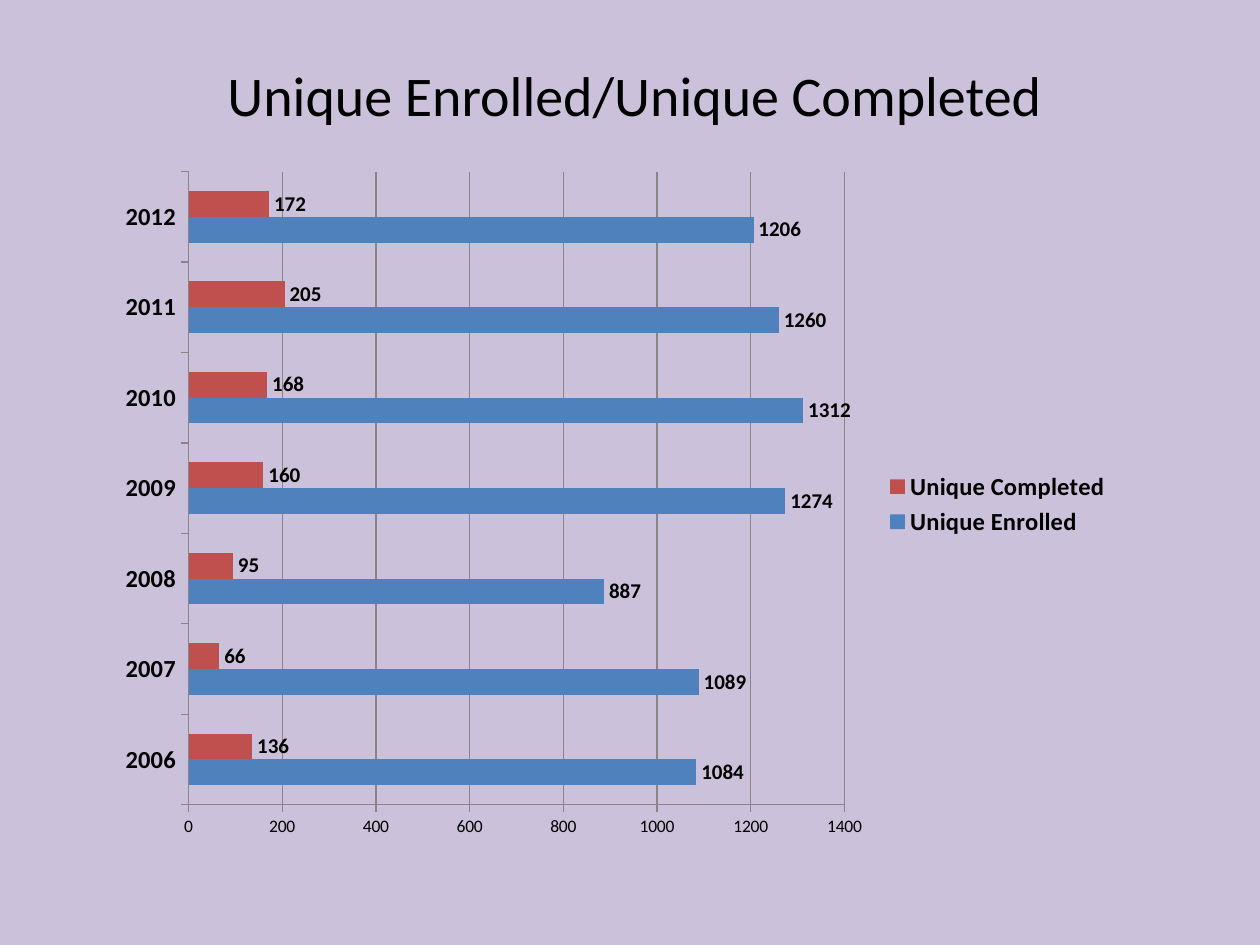
"""Build a slide with a bar chart of unique enrolments and completions by year."""
import pptx
import pptx.chart.data
import pptx.dml.color
import pptx.enum.chart
import pptx.enum.text
import pptx.util
from pptx.util import Cm

FONT = "Calibri"
COLORS = {
    "background": "CCC1DA",
    "text": "000000",
    "lines": "868686",
    "Unique Enrolled": "4F81BD",
    "Unique Completed": "C0504D",
}
YEARS = [str(year) for year in range(2006, 2013)]
COUNTS = {
    "Unique Enrolled": [1084, 1089, 887, 1274, 1312, 1260, 1206],
    "Unique Completed": [136, 66, 95, 160, 168, 205, 172],
}


def rgb(role):
    return pptx.dml.color.RGBColor.from_string(COLORS[role])


def style_font(font, size, bold=False):
    font.name = FONT
    font.size = pptx.util.Pt(size)
    font.bold = bold
    font.color.rgb = rgb("text")


def style_line(line):
    line.color.rgb = rgb("lines")
    line.width = pptx.util.Pt(0.75)


def set_title(slide, wording):
    title = slide.shapes.title
    title.left, title.top, title.width, title.height = Cm(2.54), Cm(0.84), Cm(20.52), Cm(2.11)
    frame = title.text_frame
    frame.text = wording
    frame.word_wrap = True
    frame.vertical_anchor = pptx.enum.text.MSO_ANCHOR.MIDDLE
    heading = frame.paragraphs[0]
    heading.alignment = pptx.enum.text.PP_ALIGN.CENTER
    style_font(heading.font, 32)


def style_axis(axis, size, bold, gridlines):
    axis.has_title = False
    axis.major_tick_mark = pptx.enum.chart.XL_TICK_MARK.OUTSIDE
    axis.minor_tick_mark = pptx.enum.chart.XL_TICK_MARK.NONE
    axis.has_major_gridlines = gridlines
    style_line(axis.format.line)
    if gridlines:
        style_line(axis.major_gridlines.format.line)
    style_font(axis.tick_labels.font, size, bold)


def style_series(series):
    series.format.fill.solid()
    series.format.fill.fore_color.rgb = rgb(series.name)
    series.invert_if_negative = False
    labels = series.data_labels
    labels.show_value = True
    labels.position = pptx.enum.chart.XL_LABEL_POSITION.OUTSIDE_END
    style_font(labels.font, 12, True)


def add_bar_chart(slide):
    enrolment = pptx.chart.data.CategoryChartData()
    enrolment.categories = YEARS
    for name, counts in COUNTS.items():
        enrolment.add_series(name, counts)
    chart = slide.shapes.add_chart(
        pptx.enum.chart.XL_CHART_TYPE.BAR_CLUSTERED,
        Cm(2.12), Cm(3.18), Cm(20.52), Cm(13.97), enrolment,
    ).chart
    chart.has_title = False
    style_font(chart.font, 10)
    style_axis(chart.category_axis, 14, True, False)
    style_axis(chart.value_axis, 10, False, True)
    chart.value_axis.minimum_scale = 0
    chart.value_axis.maximum_scale = 1400
    chart.value_axis.major_unit = 200
    bars = chart.plots[0]
    bars.gap_width = 150
    bars.overlap = 0
    bars.vary_by_categories = False
    for series in bars.series:
        style_series(series)
    chart.has_legend = True
    chart.legend.position = pptx.enum.chart.XL_LEGEND_POSITION.RIGHT
    chart.legend.include_in_layout = False
    style_font(chart.legend.font, 14, True)


def main():
    deck = pptx.Presentation()
    deck.slide_width, deck.slide_height = Cm(25.4), Cm(19.05)
    slide = deck.slides.add_slide(deck.slide_layouts[5])
    slide.background.fill.solid()
    slide.background.fill.fore_color.rgb = rgb("background")
    set_title(slide, "Unique Enrolled/Unique Completed")
    add_bar_chart(slide)
    deck.save("out.pptx")


if __name__ == "__main__":
    main()
